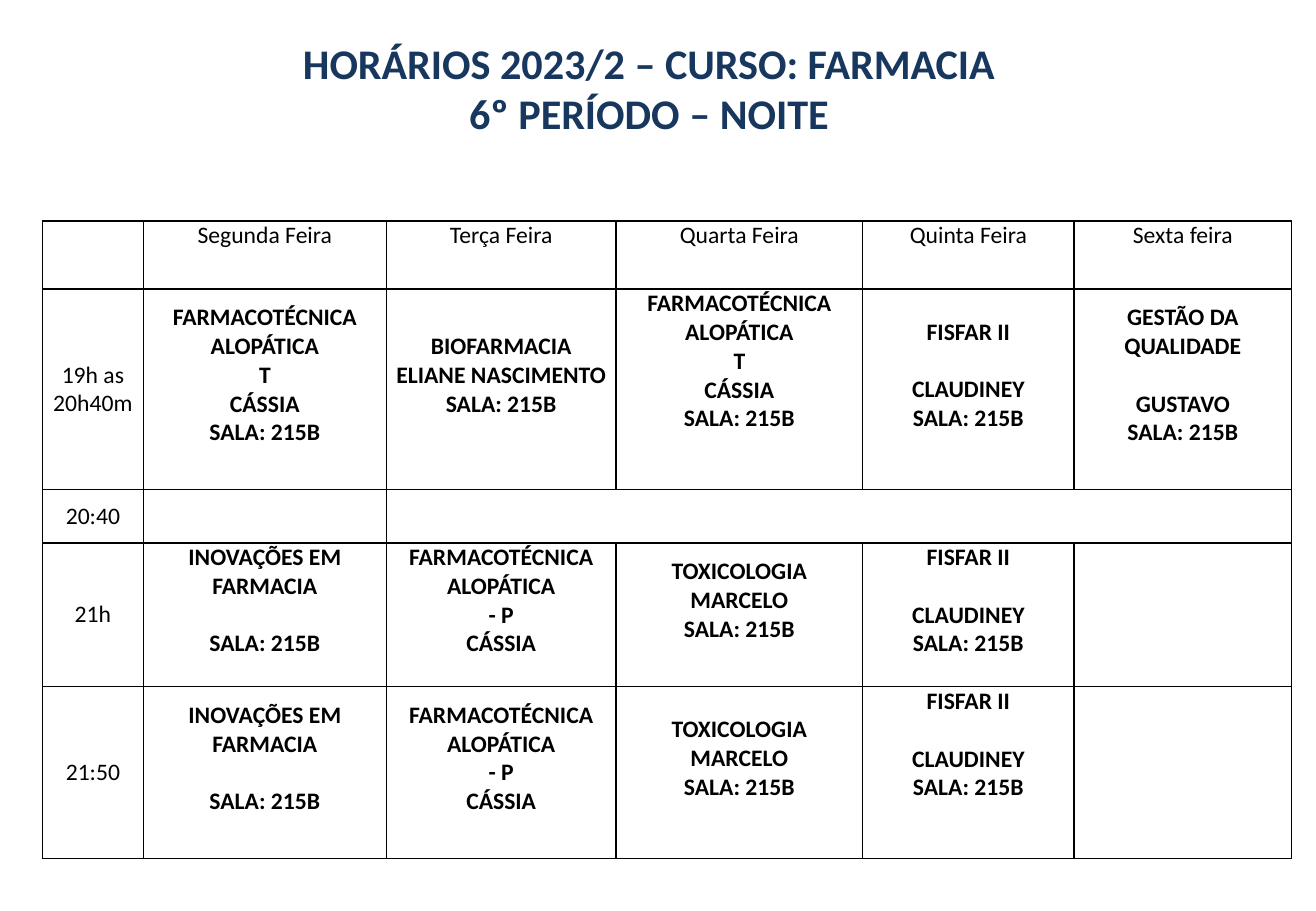
from lxml import etree
from pptx import Presentation
from pptx.dml.color import RGBColor
from pptx.enum.text import MSO_ANCHOR, PP_ALIGN
from pptx.oxml.ns import qn
from pptx.util import Inches, Pt

CENTER = PP_ALIGN.CENTER
TOP, MIDDLE = MSO_ANCHOR.TOP, MSO_ANCHOR.MIDDLE
FONT = "Calibri"
BLACK, NAVY = "000000", "17375E"
TITLE_ONLY_LAYOUT = 5
LINE_HEIGHT = 0.23
BLANK_LINE = 17

COLUMN_WIDTHS = [0.83, 2, 1.89, 2.03, 1.74, 1.79]
ROW_HEIGHTS = [0.56, 1.65, 0.44, 1.18, 1.42]
TITLE = ["HORÁRIOS 2023/2 – CURSO: FARMACIA", "6º PERÍODO – NOITE"]
DAYS = ["Segunda Feira", "Terça Feira", "Quarta Feira", "Quinta Feira", "Sexta feira"]
TIMES = ["19h as 20h40m", "20:40", "21h", "21:50"]
BREAK_ROW = 2

# Each class is a list of groups of lines, with a gap between groups.
ROOM = "SALA: 215B"
THEORY = [["FARMACOTÉCNICA ALOPÁTICA", "T", "CÁSSIA", ROOM]]
PRACTICE = [["FARMACOTÉCNICA ALOPÁTICA", "- P", "CÁSSIA"]]
BIOPHARMACY = [["BIOFARMACIA", "ELIANE NASCIMENTO", ROOM]]
PHYSIOLOGY = [["FISFAR II"], ["CLAUDINEY", ROOM]]
QUALITY = [["GESTÃO DA QUALIDADE"], ["GUSTAVO", ROOM]]
INNOVATION = [["INOVAÇÕES EM FARMACIA"], [ROOM]]
TOXICOLOGY = [["TOXICOLOGIA", "MARCELO", ROOM]]
LATE_CLASSES = [INNOVATION, PRACTICE, TOXICOLOGY, PHYSIOLOGY]
CLASSES = {
    1: [THEORY, BIOPHARMACY, THEORY, PHYSIOLOGY, QUALITY],
    3: LATE_CLASSES,
    4: LATE_CLASSES,
}
RAISED_CELLS = {(1, 3), (4, 4)}


def color(hex_value):
    return RGBColor.from_string(hex_value)


def write_groups(frame, groups, size, hex_value, bold):
    """Write centred lines, leaving a blank line's space before each later group."""
    para = None
    for group_index, lines in enumerate(groups):
        for line_index, line in enumerate(lines):
            para = frame.paragraphs[0] if para is None else frame.add_paragraph()
            para.text = line
            para.alignment = CENTER
            if group_index and not line_index:
                para.space_before = Pt(BLANK_LINE)
            para.font.name = FONT
            para.font.size = Pt(size)
            para.font.bold = bold
            para.font.color.rgb = color(hex_value)


def add_title(slide):
    title = slide.shapes.title
    title.left, title.top = Inches(0.3), Inches(0.25)
    title.width, title.height = Inches(10.08), Inches(0.94)
    title.text_frame.vertical_anchor = MIDDLE
    write_groups(title.text_frame, [TITLE], 25, NAVY, True)


def format_cell(cell):
    cell.margin_left = cell.margin_right = Inches(0.05)
    cell.margin_top = cell.margin_bottom = 0
    properties = cell._tc.get_or_add_tcPr()
    for side in ("a:lnL", "a:lnR", "a:lnT", "a:lnB"):
        border = etree.SubElement(properties, qn(side), w=str(Pt(1)))
        fill = etree.SubElement(border, qn("a:solidFill"))
        etree.SubElement(fill, qn("a:srgbClr"), val=BLACK)
    cell.fill.background()


def fill_cell(cell, groups, bold=False, anchor=MIDDLE, lines_below=0):
    cell.vertical_anchor = anchor
    cell.margin_bottom = Inches(LINE_HEIGHT * lines_below)
    write_groups(cell.text_frame, groups, 14, BLACK, bold)


def add_timetable(slide):
    frame = slide.shapes.add_table(
        len(ROW_HEIGHTS), len(COLUMN_WIDTHS), Inches(0.35), Inches(1.82),
        Inches(sum(COLUMN_WIDTHS)), Inches(sum(ROW_HEIGHTS)))
    table = frame.table
    table.first_row = table.horz_banding = False
    for column, width in zip(table.columns, COLUMN_WIDTHS):
        column.width = Inches(width)
    for row, height in zip(table.rows, ROW_HEIGHTS):
        row.height = Inches(height)
    for cell in table.iter_cells():
        format_cell(cell)
    table.cell(BREAK_ROW, 2).merge(table.cell(BREAK_ROW, 5))

    for column, day in enumerate(DAYS, 1):
        fill_cell(table.cell(0, column), [[day]], anchor=TOP)
    for row, time in enumerate(TIMES, 1):
        fill_cell(table.cell(row, 0), [[time]])
    for row, classes in CLASSES.items():
        for column, groups in enumerate(classes, 1):
            lines_below = 2 if (row, column) in RAISED_CELLS else 1
            fill_cell(table.cell(row, column), groups, True, lines_below=lines_below)


def main():
    deck = Presentation()
    deck.slide_width, deck.slide_height = Inches(10.83), Inches(7.5)
    slide = deck.slides.add_slide(deck.slide_layouts[TITLE_ONLY_LAYOUT])
    add_title(slide)
    add_timetable(slide)
    deck.save("out.pptx")


if __name__ == "__main__":
    main()
